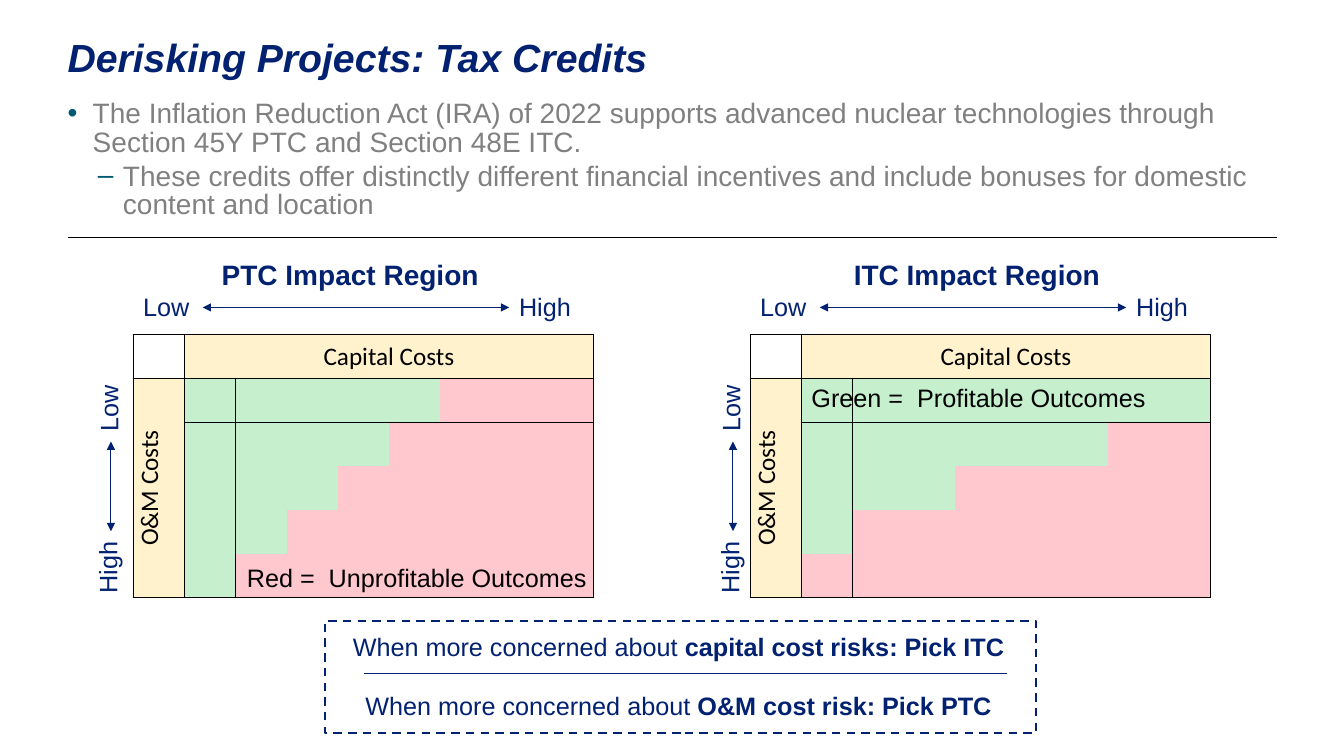
import lxml.etree
import pptx
import pptx.dml.color
import pptx.enum.dml
import pptx.enum.shapes
import pptx.enum.text
import pptx.oxml.ns
import pptx.util

EMU_PER_PX = 9144
COLORS = {
    "navy": "022170",
    "teal": "005875",
    "gray": "808080",
    "black": "000000",
    "white": "FFFFFF",
    "header": "FFF2CC",
    "profit": "C6EFCE",
    "loss": "FFC7CE",
}
PLAIN_TABLE_STYLE = "{2D5ABB26-0587-4C30-8999-92F81FD0307C}"


def px(length):
    return pptx.util.Emu(length * EMU_PER_PX)


def rgb(name):
    return pptx.dml.color.RGBColor.from_string(COLORS[name])


def add_element(parent, tag, **attributes):
    return lxml.etree.SubElement(parent, pptx.oxml.ns.qn(tag), attributes)


class SlideBuilder:
    def __init__(self, presentation):
        self.slide = presentation.slides.add_slide(presentation.slide_layouts[5])
        self.font = "Arial"

    def format_run(self, run, size, color, bold=False, italic=False, font=None):
        run.font.name = font or self.font
        run.font.size = pptx.util.Pt(size)
        run.font.bold = bold
        run.font.italic = italic
        run.font.color.rgb = rgb(color)

    def clear_margins(self, text_frame):
        text_frame.margin_left = text_frame.margin_right = 0
        text_frame.margin_top = text_frame.margin_bottom = 0

    def title(self, text, left, top, width, height):
        shape = self.slide.shapes.title
        shape.left, shape.top, shape.width, shape.height = map(px, (left, top, width, height))
        text_frame = shape.text_frame
        text_frame.text = text
        text_frame.auto_size = pptx.enum.text.MSO_AUTO_SIZE.NONE
        text_frame.vertical_anchor = pptx.enum.text.MSO_ANCHOR.MIDDLE
        self.clear_margins(text_frame)
        paragraph = text_frame.paragraphs[0]
        paragraph.alignment = pptx.enum.text.PP_ALIGN.LEFT
        paragraph.line_spacing = 0.85
        self.format_run(paragraph.runs[0], 28, "navy", bold=True, italic=True)

    def text_box(self, left, top, width, height):
        shape = self.slide.shapes.add_textbox(*map(px, (left, top, width, height)))
        shape.text_frame.word_wrap = True
        return shape

    def label(self, text, left, top, width, height=40, size=18, color="navy", bold=False, rotation=0):
        shape = self.text_box(left, top, width, height)
        shape.rotation = rotation
        shape.text_frame.text = text
        self.format_run(shape.text_frame.paragraphs[0].runs[0], size, color, bold)

    def bullets(self, items, left, top, width, height):
        text_frame = self.text_box(left, top, width, height).text_frame
        self.clear_margins(text_frame)
        for index, (text, mark, indent) in enumerate(items):
            paragraph = text_frame.add_paragraph() if index else text_frame.paragraphs[0]
            paragraph.text = text
            paragraph.level = index
            paragraph.line_spacing = 0.85
            if index:
                paragraph.space_before = pptx.util.Pt(4)
            properties = paragraph._p.get_or_add_pPr()
            properties.set("marL", str(px(indent)))
            properties.set("indent", str(px(-25)))
            bullet_color = add_element(properties, "a:buClr")
            add_element(bullet_color, "a:srgbClr", val=COLORS["teal"])
            add_element(properties, "a:buFont", typeface=self.font)
            add_element(properties, "a:buChar", char=mark)
            self.format_run(paragraph.runs[0], 20, "gray")

    def line(self, start, end, color="navy", arrows=False):
        connector = self.slide.shapes.add_connector(
            pptx.enum.shapes.MSO_CONNECTOR.STRAIGHT, *map(px, start + end))
        connector.line.color.rgb = rgb(color)
        connector.line.width = pptx.util.Pt(0.75)
        properties = connector._element.spPr
        if arrows:
            outline = properties.find(pptx.oxml.ns.qn("a:ln"))
            for tag in ("a:headEnd", "a:tailEnd"):
                add_element(outline, tag, type="triangle")
        add_element(properties, "a:effectLst")

    def dashed_box(self, left, top, width, height):
        shape = self.slide.shapes.add_shape(
            pptx.enum.shapes.MSO_SHAPE.RECTANGLE, *map(px, (left, top, width, height)))
        shape.shadow.inherit = False
        shape.fill.solid()
        shape.fill.fore_color.rgb = rgb("white")
        shape.line.color.rgb = rgb("navy")
        shape.line.width = pptx.util.Pt(1.5)
        shape.line.dash_style = pptx.enum.dml.MSO_LINE.DASH

    def advice(self, items, left, top, width, height):
        text_frame = self.text_box(left, top, width, height).text_frame
        for index, (lead, choice) in enumerate(items):
            paragraph = text_frame.add_paragraph() if index else text_frame.paragraphs[0]
            paragraph.alignment = pptx.enum.text.PP_ALIGN.CENTER
            if index:
                paragraph.space_before = pptx.util.Pt(21)
            for text, bold in ((lead, False), (choice, True)):
                run = paragraph.add_run()
                run.text = text
                self.format_run(run, 18, "navy", bold)

    def border(self, cell, sides):
        properties = cell._tc.get_or_add_tcPr()
        for side in "LRTB":
            if side in sides:
                outline = add_element(properties, "a:ln" + side, w=str(pptx.util.Pt(1)))
                fill = add_element(outline, "a:solidFill")
                add_element(fill, "a:srgbClr", val=COLORS["black"])

    def header_cell(self, cell, text):
        cell.text = text
        cell.vertical_anchor = pptx.enum.text.MSO_ANCHOR.MIDDLE
        cell.margin_left = cell.margin_right = cell.margin_top = px(1)
        cell.margin_bottom = 0
        paragraph = cell.text_frame.paragraphs[0]
        paragraph.alignment = pptx.enum.text.PP_ALIGN.CENTER
        self.format_run(paragraph.runs[0], 18, "black", font="Calibri")

    def region_table(self, profitable_counts, left, top, width, height):
        rows, columns = 6, 9
        table = self.slide.shapes.add_table(
            rows, columns, *map(px, (left, top, width, height))).table
        table.first_row = table.horz_banding = False
        table._tbl.tblPr.find(pptx.oxml.ns.qn("a:tableStyleId")).text = PLAIN_TABLE_STYLE
        table.cell(0, 1).merge(table.cell(0, columns - 1))
        table.cell(1, 0).merge(table.cell(rows - 1, 0))
        for row in range(rows):
            for column in range(columns):
                cell = table.cell(row, column)
                edges = {
                    "L": column <= 1,
                    "R": column in (0, columns - 1) or cell.is_merge_origin,
                    "T": row <= 1,
                    "B": row in (0, rows - 1) or cell.is_merge_origin,
                }
                self.border(cell, [side for side, shown in edges.items() if shown])
                if row == column == 0:
                    cell.fill.background()
                    continue
                if row == 0 or column == 0:
                    color = "header"
                else:
                    color = "profit" if column <= profitable_counts[row - 1] else "loss"
                cell.fill.solid()
                cell.fill.fore_color.rgb = rgb(color)
        self.header_cell(table.cell(0, 1), "Capital Costs")
        self.header_cell(table.cell(1, 0), "O&M Costs")
        table.cell(1, 0)._tc.get_or_add_tcPr().set("vert", "vert270")

    def impact_region(self, heading, heading_left, left, side_left, profitable_counts):
        self.region_table(profitable_counts, left, 332, 457, 261)
        self.label(heading, heading_left, 251, 286, 44, size=20, bold=True)
        self.line((left + 69, 305), (left + 373, 305), arrows=True)
        self.label("Low", left, 284, 68)
        self.label("High", left + 373, 284, 84)
        self.line((side_left + 42, 527), (side_left + 42, 438), arrows=True)
        self.label("High", side_left, 540, 77, rotation=270)
        self.label("Low", side_left + 4, 382, 71, rotation=270)


def main():
    presentation = pptx.Presentation()
    presentation.slide_width, presentation.slide_height = px(1333), px(750)
    builder = SlideBuilder(presentation)
    builder.title("Derisking Projects: Tax Credits", 67, 40, 1200, 40)
    builder.bullets([
        ("The Inflation Reduction Act (IRA) of 2022 supports advanced nuclear technologies "
         "through Section 45Y PTC and Section 48E ITC.", "•", 25),
        ("These credits offer distinctly different financial incentives and include bonuses "
         "for domestic content and location", "–", 55),
    ], 67, 100, 1200, 136)
    builder.line((67, 236), (1267, 236), "black")
    builder.impact_region("PTC Impact Region", 210, 132, 68, (5, 4, 3, 2, 1))
    builder.impact_region("ITC Impact Region", 837, 744, 685, (8, 6, 3, 1, 0))
    builder.label("Red =  Unprofitable Outcomes", 235, 553, 408, color="black")
    builder.label("Green =  Profitable Outcomes", 795, 374, 408, color="black")
    builder.dashed_box(322, 616, 706, 111)
    builder.advice([
        ("When more concerned about ", "capital cost risks: Pick ITC"),
        ("When more concerned about ", "O&M cost risk: Pick PTC"),
    ], 335, 621, 676, 101)
    builder.line((361, 668), (999, 668))
    presentation.save("out.pptx")


if __name__ == "__main__":
    main()
